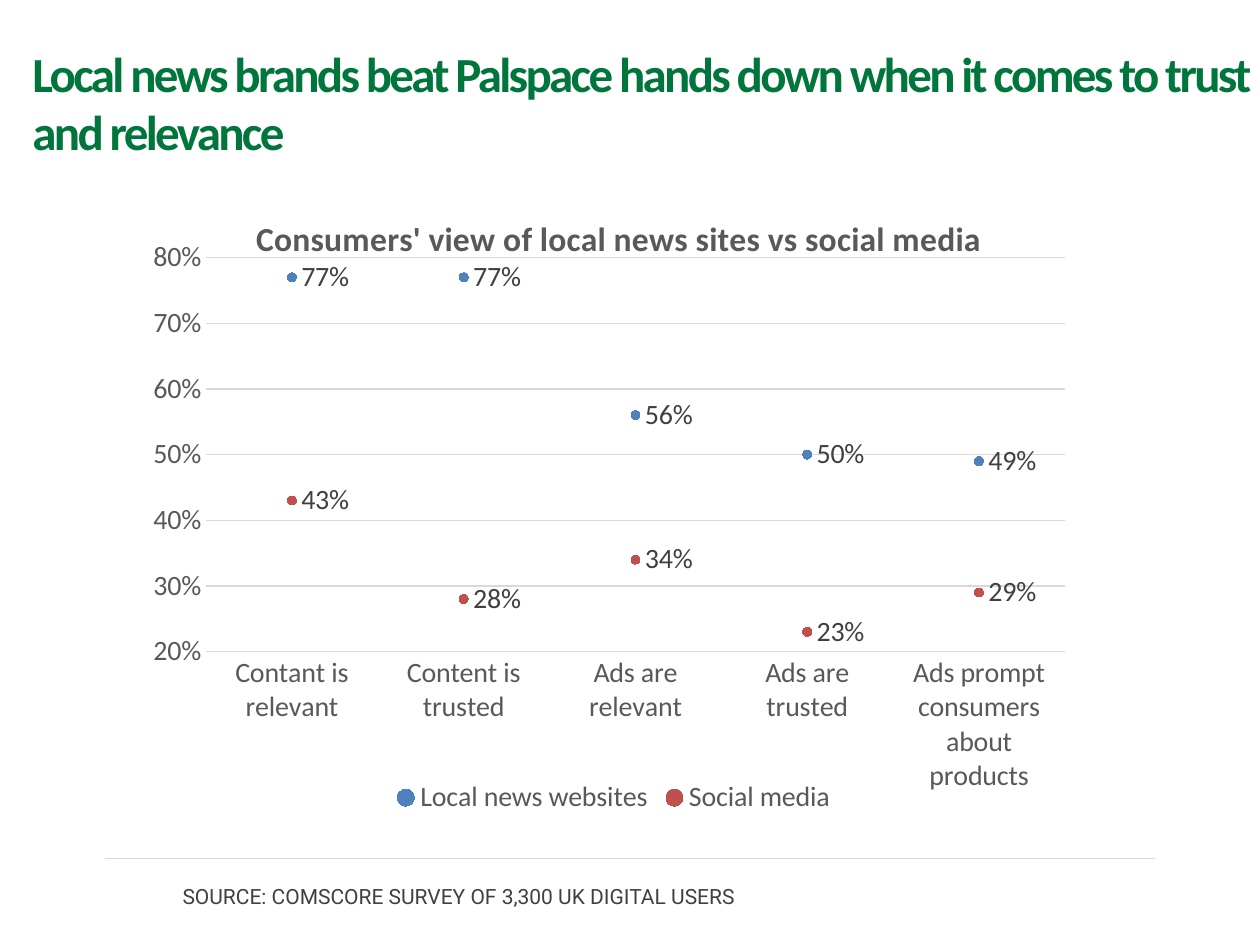
from lxml import etree
from pptx import Presentation
from pptx import util as u
from pptx.chart import data as chart_data
from pptx.dml.color import RGBColor
from pptx.enum import chart as ch, shapes, text
from pptx.oxml import ns

TITLE = "Local news brands beat Palspace hands down when it comes to trust and relevance"
SOURCE = "SOURCE: COMSCORE SURVEY OF 3,300 UK DIGITAL USERS"
CHART_TITLE = "Consumers' view of local news sites vs social media"
CATEGORIES = ["Contant is relevant", "Content is trusted", "Ads are relevant",
              "Ads are trusted", "Ads prompt consumers about products"]

GREEN = RGBColor(0x00, 0x76, 0x3C)
BLUE = RGBColor(0x4F, 0x81, 0xBD)
RED = RGBColor(0xC0, 0x50, 0x4D)
GREY = RGBColor(0x59, 0x59, 0x59)
DARK = RGBColor(0x40, 0x40, 0x40)
PALE = RGBColor(0xD9, 0xD9, 0xD9)

SERIES = [
    ("Local news websites", (0.77, 0.77, 0.56, 0.5, 0.49), BLUE),
    ("Social media", (0.43, 0.28, 0.34, 0.23, 0.29), RED),
]


def box(left, top, width, height):
    return [u.Cm(value) for value in (left, top, width, height)]


def style_font(font, name, size, color, bold=False):
    font.name, font.size, font.bold = name, u.Pt(size), bold
    font.color.rgb = color


def style_line(line):
    line.color.rgb = PALE
    line.width = u.Pt(0.75)


def set_layout(parent, index, values):
    for old in parent.findall(ns.qn("c:layout")):
        parent.remove(old)
    layout = etree.Element(ns.qn("c:layout"))
    manual = etree.SubElement(layout, ns.qn("c:manualLayout"))
    for tag, value in values:
        etree.SubElement(manual, ns.qn(f"c:{tag}")).set("val", str(value))
    parent.insert(index, layout)


def add_title(slide):
    title = slide.shapes.title
    title.left, title.top, title.width, title.height = box(0.4, 0.74, 25.22, 2.64)
    frame = title.text_frame
    frame.text = TITLE
    frame.word_wrap = True
    frame.vertical_anchor = text.MSO_ANCHOR.TOP
    paragraph = frame.paragraphs[0]
    paragraph.alignment = text.PP_ALIGN.LEFT
    style_font(paragraph.font, "Calibri", 28, GREEN, True)
    paragraph.runs[0].font._element.set("spc", "-150")


def add_trust_chart(slide):
    data = chart_data.CategoryChartData(number_format="0%")
    data.categories = CATEGORIES
    for name, values, _ in SERIES:
        data.add_series(name, values)
    chart = slide.shapes.add_chart(ch.XL_CHART_TYPE.LINE_MARKERS,
                                   *box(2.97, 3.56, 18.8, 12.98), data).chart
    style_font(chart.font, "Calibri", 16, GREY)

    chart.has_title = True
    title = chart.chart_title
    title.include_in_layout = False
    title.text_frame.text = CHART_TITLE
    style_font(title.text_frame.paragraphs[0].font, "Calibri", 19.2, GREY, True)
    set_layout(title._element, 1, [("xMode", "edge"), ("yMode", "edge"),
                                   ("x", 0.11), ("y", 0.05)])
    set_layout(chart._chartSpace.chart.plotArea, 0,
               [("layoutTarget", "inner"), ("xMode", "edge"), ("yMode", "edge"),
                ("x", 0.063), ("y", 0.126), ("w", 0.921), ("h", 0.612)])

    chart.has_legend = True
    chart.legend.position = ch.XL_LEGEND_POSITION.BOTTOM
    chart.legend.include_in_layout = False
    style_font(chart.legend.font, "Calibri", 16, GREY)

    for axis in (chart.category_axis, chart.value_axis):
        axis.major_tick_mark = axis.minor_tick_mark = ch.XL_TICK_MARK.NONE
        style_font(axis.tick_labels.font, "Calibri", 16, GREY)
    style_line(chart.category_axis.format.line)
    value_axis = chart.value_axis
    value_axis.format.line.fill.background()
    value_axis.minimum_scale, value_axis.maximum_scale = 0.2, 0.8
    value_axis.major_unit = 0.1
    value_axis.tick_labels.number_format = "0%"
    value_axis.tick_labels.number_format_is_linked = False
    style_line(value_axis.major_gridlines.format.line)

    plot = chart.plots[0]
    plot.vary_by_categories = False
    for series, (_, _, color) in zip(plot.series, SERIES):
        series.smooth = False
        series.format.line.fill.background()
        marker = series.marker
        marker.style, marker.size = ch.XL_MARKER_STYLE.CIRCLE, 5
        marker.format.fill.solid()
        marker.format.fill.fore_color.rgb = color
        marker.format.line.color.rgb = color
        labels = series.data_labels
        labels.show_value = True
        labels.position = ch.XL_LABEL_POSITION.RIGHT
        labels.number_format, labels.number_format_is_linked = "0%", False
        style_font(labels.font, "Calibri", 16, DARK)


def add_source(slide):
    rule = slide.shapes.add_connector(shapes.MSO_CONNECTOR.STRAIGHT,
                                      *box(2.11, 17.3, 23.29, 17.3))
    style_line(rule.line)
    etree.SubElement(rule._element.spPr, ns.qn("a:effectLst"))
    frame = slide.shapes.add_textbox(*box(3.43, 17.63, 11.96, 1.4)).text_frame
    frame.word_wrap = True
    frame.text = SOURCE
    paragraph = frame.paragraphs[0]
    paragraph.line_spacing = u.Pt(16)
    paragraph.space_after = u.Pt(12)
    style_font(paragraph.font, "Roboto", 12, DARK)


def main():
    presentation = Presentation()
    presentation.slide_width, presentation.slide_height = u.Cm(25.4), u.Cm(19.05)
    slide = presentation.slides.add_slide(presentation.slide_layouts[5])
    add_title(slide)
    add_trust_chart(slide)
    add_source(slide)
    presentation.save("out.pptx")


if __name__ == "__main__":
    main()
